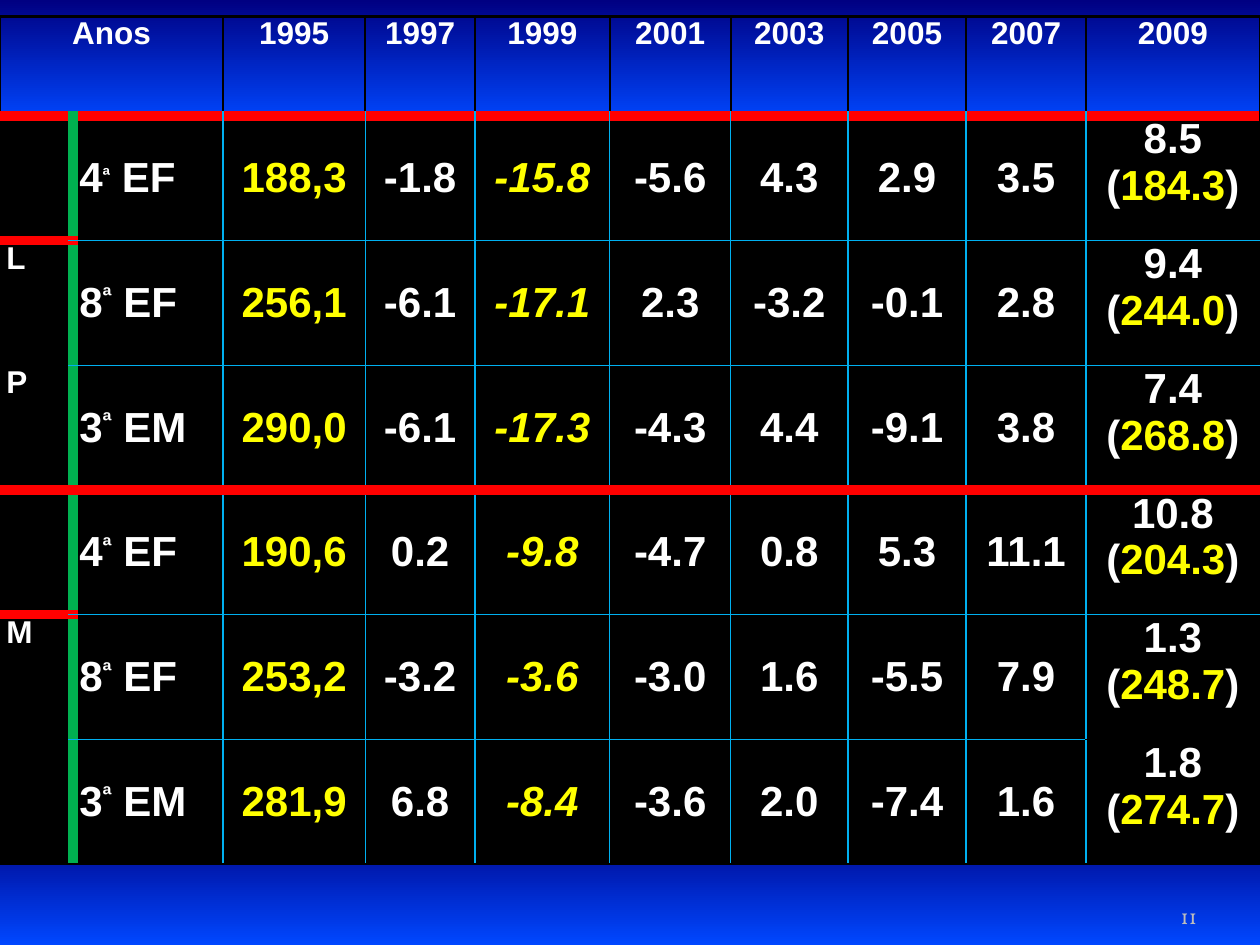
from dataclasses import dataclass

from lxml.etree import SubElement
from pptx import Presentation
from pptx.dml.color import RGBColor as Rgb
from pptx.enum.text import MSO_ANCHOR as Anchor, PP_ALIGN as Align
from pptx.oxml.ns import qn
from pptx.util import Inches, Pt


@dataclass(frozen=True)
class Theme:
    """Colours, fonts and type sizes of the slide."""
    night: str = "000082"
    azure: str = "0047FF"
    black: str = "000000"
    white: str = "FFFFFF"
    yellow: str = "FFFF00"
    red: str = "FF0000"
    green: str = "00B050"
    blue: str = "00B0F0"
    grey: str = "BDBDBD"
    body: str = "Arial"
    numeral: str = "Vollkorn"
    small: int = 12
    medium: int = 18
    ordinal: int = 20
    large: int = 24


THEME = Theme()
FRAME = (THEME.black, 1.5)
EDGE = (THEME.black, 1)
GRID = (THEME.blue, 1)
SECTION = (THEME.red, 6)
STUB = (THEME.green, 6)

COLUMNS = (0.58, 1.19, 1.13, 0.87, 1.07, 0.96, 0.93, 0.94, 0.95, 1.38)
HEADER_HEIGHT, ROW_HEIGHT, TABLE_TOP = 0.79, 0.99, 0.13
ROW_LINES = (FRAME, SECTION, GRID, GRID, SECTION, GRID, GRID, FRAME)
COLUMN_LINES = (FRAME, STUB, *[GRID] * 8, EDGE)
LAST = len(COLUMNS) - 1
NO_STYLE = "{2D5ABB26-0587-4C30-8999-92F81FD0307C}"

YEARS = ("1995", "1997", "1999", "2001", "2003", "2005", "2007", "2009")
SUBJECTS = ("", "L", "P", "", "M", "")
GRADES = (("4", "EF"), ("8", "EF"), ("3", "EM")) * 2
SCORES = (
    ("188,3", "-1.8", "-15.8", "-5.6", "4.3", "2.9", "3.5", "8.5", "184.3"),
    ("256,1", "-6.1", "-17.1", "2.3", "-3.2", "-0.1", "2.8", "9.4", "244.0"),
    ("290,0", "-6.1", "-17.3", "-4.3", "4.4", "-9.1", "3.8", "7.4", "268.8"),
    ("190,6", "0.2", "-9.8", "-4.7", "0.8", "5.3", "11.1", "10.8", "204.3"),
    ("253,2", "-3.2", "-3.6", "-3.0", "1.6", "-5.5", "7.9", "1.3", "248.7"),
    ("281,9", "6.8", "-8.4", "-3.6", "2.0", "-7.4", "1.6", "1.8", "274.7"),
)


def paint_background(slide):
    """Fill the slide with alternating dark and bright bands."""
    fill = slide.background.fill
    fill.gradient()
    fill.gradient_angle = 270
    stops = fill._fill._gradFill.find(qn("a:gsLst"))
    for stop in list(stops):
        stops.remove(stop)
    for index, share in enumerate((0, 13, 28, 43, 58, 72, 87, 100)):
        stop = SubElement(stops, qn("a:gs"), pos=str(share * 1000))
        SubElement(stop, qn("a:srgbClr"), val=(THEME.night, THEME.azure)[index % 2])


def horizontal_line(edge, column):
    """Return the rule that lies on a row edge in a column."""
    line = ROW_LINES[edge]
    if line == GRID and column == 0:
        return None
    return EDGE if (edge, column) == (6, LAST) else line


def vertical_line(edge, row):
    """Return the rule that lies on a column edge in a row."""
    if row == 0:
        return None if edge == 1 else FRAME
    return COLUMN_LINES[edge]


def draw_borders(cell, row, column):
    """Rule the four sides of a cell."""
    right = 2 if (row, column) == (0, 0) else column + 1
    sides = {
        "L": vertical_line(column, row),
        "R": vertical_line(right, row),
        "T": horizontal_line(row, column),
        "B": horizontal_line(row + 1, column),
    }
    properties = cell._tc.get_or_add_tcPr()
    for side, line in sides.items():
        if line:
            color, width = line
            rule = SubElement(properties, qn(f"a:ln{side}"), w=str(Pt(width)))
            SubElement(SubElement(rule, qn("a:solidFill")), qn("a:srgbClr"), val=color)


def format_font(font, size, color=THEME.white, name=THEME.body, bold=True):
    """Give a font its face, size, colour and weight."""
    font.name, font.size, font.bold = name, Pt(size), bold
    font.color.rgb = Rgb.from_string(color)


def write_cell(cell, parts, size, align=Align.CENTER, anchor=Anchor.MIDDLE):
    """Write (text, colour) parts into a cell and return their runs."""
    cell.margin_left = cell.margin_right = Inches(0.05)
    cell.margin_top = cell.margin_bottom = 0
    cell.vertical_anchor = anchor
    paragraph = cell.text_frame.paragraphs[0]
    paragraph.alignment = align
    format_font(paragraph.font, size)
    runs = []
    for text, color in parts:
        run = paragraph.add_run()
        run.text = text
        format_font(run.font, size, color)
        runs.append(run)
    return runs


def write_header(table):
    """Write the year headings."""
    table.cell(0, 0).merge(table.cell(0, 1))
    for column, heading in enumerate(("Anos", "", *YEARS)):
        if heading:
            write_cell(table.cell(0, column), [(heading, THEME.white)],
                       THEME.medium, anchor=Anchor.TOP)


def write_grade(cell, number, stage, ordinal_size):
    """Write a grade with its raised ordinal sign."""
    parts = [(text, THEME.white) for text in (number, "ª", f" {stage}")]
    ordinal = write_cell(cell, parts, THEME.large, Align.JUSTIFY)[1]
    ordinal.font.size = Pt(ordinal_size)
    ordinal.font._element.set("baseline", "30000")


def write_scores(table, row, scores):
    """Write the first score, the yearly changes and the latest score."""
    *changes, latest_change, latest = scores
    for column, value in enumerate(changes, start=2):
        color = THEME.yellow if column in (2, 4) else THEME.white
        run, = write_cell(table.cell(row, column), [(value, color)], THEME.large)
        run.font.italic = column == 4
    parts = [(f"{latest_change} (", THEME.white), (latest, THEME.yellow), (")", THEME.white)]
    write_cell(table.cell(row, LAST), parts, THEME.large, anchor=Anchor.TOP)


def add_score_table(slide, width):
    """Add the table of scores by subject, grade and year."""
    heights = (HEADER_HEIGHT, *[ROW_HEIGHT] * len(SCORES))
    frame = slide.shapes.add_table(len(heights), len(COLUMNS), 0, Inches(TABLE_TOP),
                                   width, Inches(sum(heights)))
    table = frame.table
    table.first_row = table.horz_banding = False
    table._tbl.tblPr.find(qn("a:tableStyleId")).text = NO_STYLE
    for column, share in zip(table.columns, COLUMNS):
        column.width = Inches(share)
    for row, height in enumerate(heights):
        table.rows[row].height = Inches(height)
        for column in range(len(COLUMNS)):
            cell = table.cell(row, column)
            draw_borders(cell, row, column)
            if row:
                cell.fill.solid()
                cell.fill.fore_color.rgb = Rgb.from_string(THEME.black)
            else:
                cell.fill.background()
    write_header(table)
    for row, (subject, grade, scores) in enumerate(zip(SUBJECTS, GRADES, SCORES), start=1):
        write_cell(table.cell(row, 0), [(subject, THEME.white)] if subject else [],
                   THEME.medium, Align.JUSTIFY, Anchor.TOP)
        write_grade(table.cell(row, 1), *grade, THEME.ordinal if row == 1 else THEME.large)
        write_scores(table, row, scores)


def add_page_number(slide, width, height, number):
    """Add the page number at the lower right."""
    box = slide.shapes.add_textbox(int(width * 0.867), int(height * 0.936),
                                   int(width * 0.083), int(height * 0.053))
    text = box.text_frame
    text.word_wrap = True
    text.margin_left = text.margin_right = 0
    text.vertical_anchor = Anchor.BOTTOM
    paragraph = text.paragraphs[0]
    paragraph.text = number
    paragraph.alignment = Align.RIGHT
    format_font(paragraph.font, THEME.small, THEME.grey, THEME.numeral, bold=False)


def main():
    """Build the slide and save it."""
    deck = Presentation()
    deck.slide_width, deck.slide_height = Inches(10), Inches(7.5)
    slide = deck.slides.add_slide(deck.slide_layouts[6])
    paint_background(slide)
    add_score_table(slide, deck.slide_width)
    add_page_number(slide, deck.slide_width, deck.slide_height, "11")
    deck.save("out.pptx")


if __name__ == "__main__":
    main()
